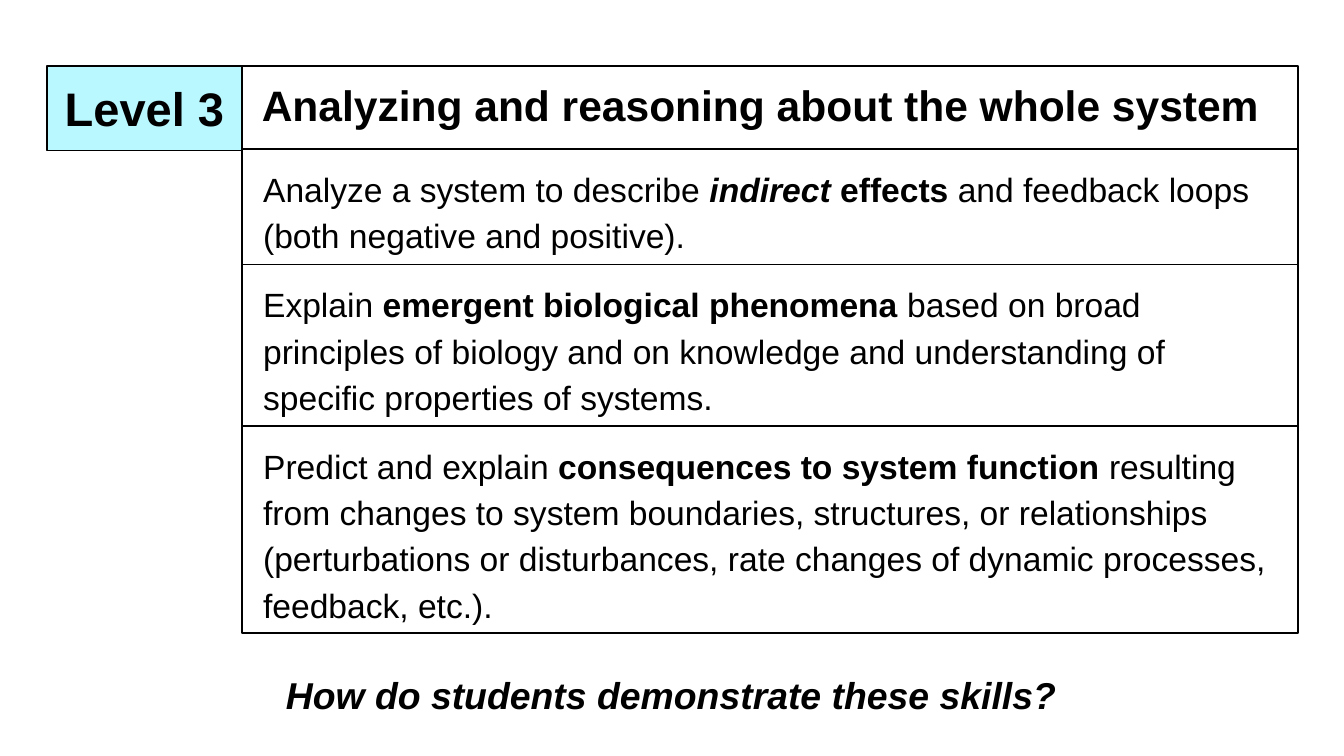
import pptx
import pptx.util
import pptx.dml.color
import pptx.enum.shapes
import pptx.enum.text

Inches = pptx.util.Inches
Pt = pptx.util.Pt
ALIGN = pptx.enum.text.PP_ALIGN
ANCHOR = pptx.enum.text.MSO_ANCHOR


def color(value):
    return pptx.dml.color.RGBColor.from_string(value)


def write(box, spans, size=18, align=ALIGN.LEFT, anchor=ANCHOR.TOP, inset=0.1,
          indent=0, spacing=None, after=None):
    frame = box.text_frame
    frame.word_wrap = True
    frame.vertical_anchor = anchor
    frame.margin_left = frame.margin_right = Inches(inset)
    frame.margin_top = frame.margin_bottom = Inches(inset)
    para = frame.paragraphs[0]
    para.alignment = align
    if indent:
        para._p.get_or_add_pPr().set("marL", str(Inches(indent)))
    if spacing:
        para.line_spacing = spacing
    if after:
        para.space_after = Pt(after)
    for text, style in spans:
        span = para.add_run()
        span.text = text
        span.font.name = "Arial"
        span.font.size = Pt(size)
        span.font.bold = "b" in style
        span.font.italic = "i" in style
        span.font.color.rgb = color("000000")


deck = pptx.Presentation()
deck.slide_width = Inches(10)
deck.slide_height = Inches(10) * 9 // 16
page = deck.slides.add_slide(deck.slide_layouts[6])

heading = [("Analyzing and reasoning about the whole system", "b")]
level = [("Level 3", "b")]
skills = [
    [("Analyze a system to describe ", ""), ("indirect", "bi"), (" effects", "b"),
     (" and feedback loops (both negative and positive).", "")],
    [("Explain ", ""), ("emergent biological phenomena", "b"),
     (" based on broad principles of biology and on knowledge and "
      "understanding of specific properties of systems.", "")],
    [("Predict and explain ", ""), ("consequences to system function", "b"),
     (" resulting from changes to system boundaries, structures, or "
      "relationships (perturbations or disturbances, rate changes of "
      "dynamic processes, feedback, etc.).", "")],
]
skill_format = dict(indent=0.06, spacing=1.15, after=12)

cells = [
    (1.73, 0.49, 7.93, 0.63, "FFFFFF", heading, dict(size=22.8, indent=0.12)),
]
top = 1.11
for spans, height in zip(skills, [0.86, 1.2, 1.54]):
    cells.append((1.8, top, 7.86, height, "FFFFFF", spans, skill_format))
    top += height
cells.insert(2, (0.35, 0.49, 1.45, 0.63, "BAF8FF", level,
                 dict(size=25.2, align=ALIGN.CENTER, anchor=ANCHOR.MIDDLE)))

for left, top, width, height, fill, spans, style in cells:
    box = page.shapes.add_shape(
        pptx.enum.shapes.MSO_SHAPE.RECTANGLE,
        Inches(left), Inches(top), Inches(width), Inches(height))
    box.shadow.inherit = False
    box.fill.solid()
    box.fill.fore_color.rgb = color(fill)
    box.line.color.rgb = color("000000")
    box.line.width = Pt(0.75)
    write(box, spans, **style)

question = page.shapes.add_textbox(Inches(1.82), Inches(4.95), Inches(6.35), Inches(0.44))
write(question, [("How do students demonstrate these skills?", "bi")],
      size=20, align=ALIGN.CENTER, inset=0.05)

deck.save("out.pptx")
